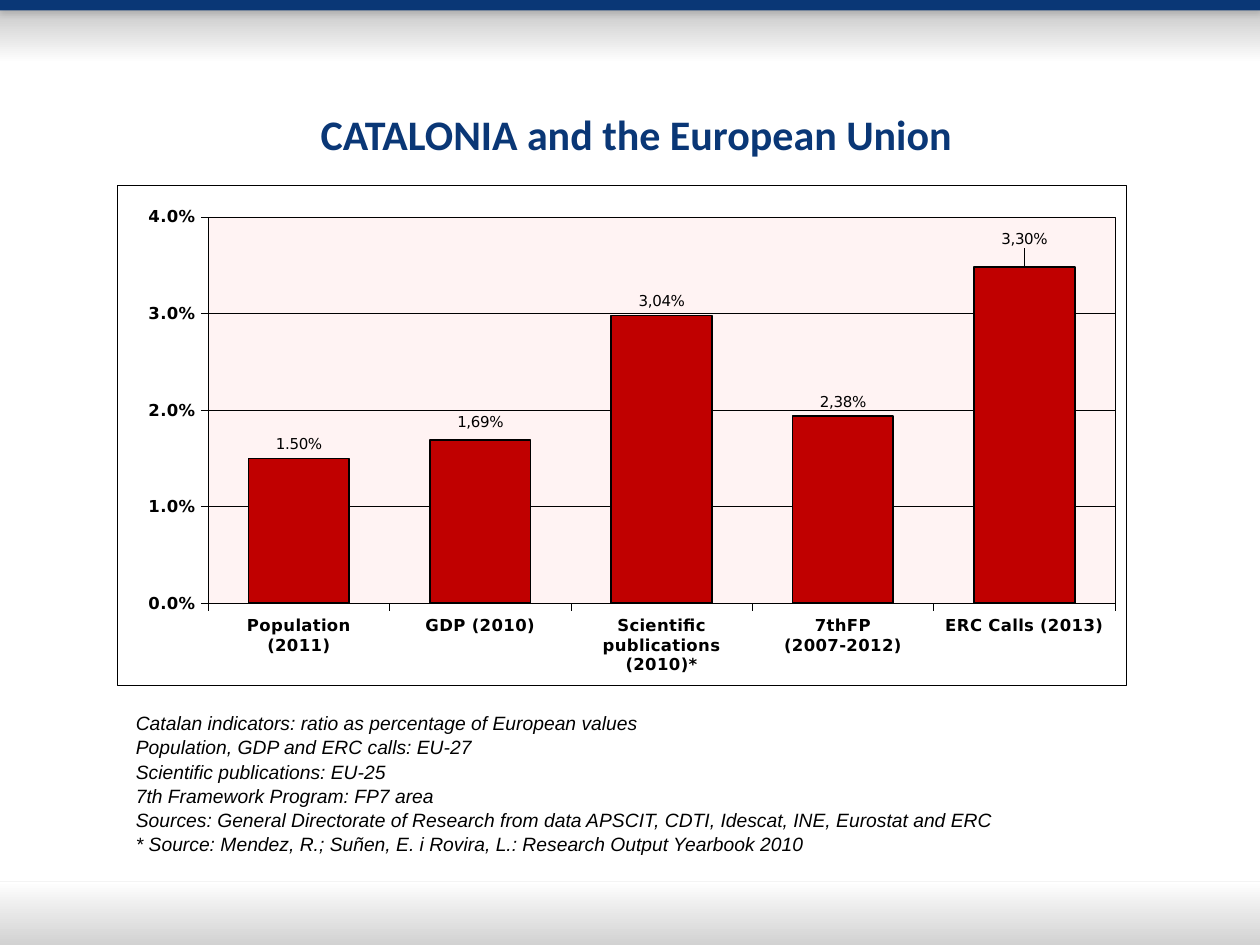
from pptx import Presentation, util as u
from pptx.chart import data as chart_data
from pptx.dml import color
from pptx.enum import chart as ch, shapes, text
from pptx.oxml import parse_xml
from pptx.oxml.ns import nsdecls, qn

TITLE = "CATALONIA and the European Union"
INDICATORS = [
    ("Population (2011)", 0.015, None, 0),
    ("GDP (2010)", 0.0169, "1,69%", -0.008),
    ("Scientific publications (2010)*", 0.0298, "3,04%", 0),
    ("7thFP\n(2007-2012)", 0.0194, "2,38%", 0),
    ("ERC Calls (2013)", 0.0348, "3,30%", -0.028),
]
NOTES = [
    "Catalan indicators: ratio as percentage of European values",
    "Population, GDP and ERC calls: EU-27",
    "Scientific publications: EU-25",
    "7th Framework Program: FP7 area",
    "Sources: General Directorate of Research from data APSCIT, CDTI, Idescat, INE, Eurostat and ERC",
    "* Source: Mendez, R.; Suñen, E. i Rovira, L.: Research Output Yearbook 2010",
]
THEME = {
    "navy": "0A3776", "grey": "BFBFBF", "white": "FFFFFF", "black": "000000",
    "bar": "C00000", "plot": "FFF3F3", "hairline": 0.25, "bar_line": 0.96,
    "title": dict(name="Calibri", size=u.Pt(24), bold=True),
    "notes": dict(name="Arial", size=u.Pt(11), italic=True),
    "axis": dict(name="DejaVu Sans", size=u.Pt(9.4), bold=True),
    "label": dict(name="DejaVu Sans", size=u.Pt(8.6), bold=False),
}
WIDTH, HEIGHT = u.Inches(10), u.Inches(7.5)
BAND = 1 / 15
PLOT_AREA = dict(x=0.09, y=0.063, w=0.899, h=0.774)


def rgb(name):
    return color.RGBColor.from_string(THEME[name])


def apply(target, **values):
    for name, value in values.items():
        setattr(target, name, value)


def style(font, kind, colour="black"):
    apply(font, **THEME[kind])
    font.color.rgb = rgb(colour)


def rule(line, width=THEME["hairline"]):
    line.color.rgb = rgb("black")
    line.width = u.Pt(width)


def box(left, top, width, height):
    return [round(left * WIDTH), round(top * HEIGHT),
            round(width * WIDTH), round(height * HEIGHT)]


def add_band(slide, top, height):
    band = slide.shapes.add_shape(shapes.MSO_SHAPE.RECTANGLE, *box(0, top, 1, height))
    band.shadow.inherit = False
    band.line.fill.background()
    slide.shapes.title.element.addprevious(band.element)
    return band


def add_gradient(slide, top, angle, alpha):
    band = add_band(slide, top, BAND)
    band.fill.gradient()
    band.fill.gradient_angle = angle
    for stop, name in zip(band.fill.gradient_stops, ("grey", "white")):
        stop.color.rgb = rgb(name)
    for colour in band.element.spPr.iter(qn("a:srgbClr")):
        colour.append(parse_xml(f'<a:alpha {nsdecls("a")} val="{alpha * 1000}"/>'))


def add_header(slide):
    header = add_band(slide, 0, 0.011)
    header.fill.solid()
    header.fill.fore_color.rgb = rgb("navy")
    header.element.spPr.find(qn("a:effectLst")).append(parse_xml(
        f'<a:outerShdw {nsdecls("a")} blurRad="{u.Pt(3.1)}" dist="{u.Pt(1.8)}" '
        'dir="5400000" rotWithShape="0"><a:srgbClr val="808080">'
        '<a:alpha val="35000"/></a:srgbClr></a:outerShdw>'))


def add_title(slide):
    title = slide.shapes.title
    apply(title, **dict(zip(("left", "top", "width", "height"),
                            box(0.067, 0.017, 0.858, 0.22))))
    frame = title.text_frame
    frame.text = TITLE
    apply(frame, vertical_anchor=text.MSO_ANCHOR.BOTTOM, word_wrap=True,
          auto_size=text.MSO_AUTO_SIZE.NONE,
          margin_bottom=u.Inches(0.52), margin_left=u.Inches(0.28))
    paragraph = frame.paragraphs[0]
    paragraph.alignment = text.PP_ALIGN.CENTER
    style(paragraph.runs[0].font, "title", "navy")


def manual_layout(**values):
    body = "".join(f'<c:{key} val="{value}"/>' for key, value in values.items())
    return parse_xml(f'<c:layout {nsdecls("c")}><c:manualLayout>{body}'
                     '</c:manualLayout></c:layout>')


def filled(name, outlined):
    width = u.Pt(THEME["hairline"])
    return parse_xml(
        f'<c:spPr {nsdecls("c", "a")}><a:solidFill><a:srgbClr val="{THEME[name]}"/>'
        f'</a:solidFill><a:ln w="{width}"><a:solidFill>'
        f'<a:srgbClr val="{THEME[outlined]}"/></a:solidFill></a:ln></c:spPr>')


def add_labels(series):
    labels = series.data_labels
    apply(labels, show_value=True, number_format="0.00%", number_format_is_linked=False,
          position=ch.XL_LABEL_POSITION.OUTSIDE_END)
    style(labels.font, "label")
    for index, (_, _, caption, shift) in enumerate(INDICATORS):
        if not caption:
            continue
        label = series.points[index].data_label
        label.text_frame.text = caption
        style(label.text_frame.paragraphs[0].runs[0].font, "label")
        label.position = ch.XL_LABEL_POSITION.OUTSIDE_END
        if shift:
            element = labels._element.findall(qn("c:dLbl"))[-1]
            element.insert(1, manual_layout(x=0, y=shift))


def add_chart(slide):
    source = chart_data.CategoryChartData(number_format="0.00%")
    source.categories = [row[0] for row in INDICATORS]
    source.add_series("Series 1", [row[1] for row in INDICATORS])
    chart = slide.shapes.add_chart(ch.XL_CHART_TYPE.COLUMN_CLUSTERED,
                                   *box(0.093, 0.196, 0.801, 0.529), source).chart
    apply(chart, has_legend=False, has_title=False)
    style(chart.font, "label")
    for axis in (chart.category_axis, chart.value_axis):
        axis.major_tick_mark = ch.XL_TICK_MARK.OUTSIDE
        style(axis.tick_labels.font, "axis")
        rule(axis.format.line)
    apply(chart.value_axis, minimum_scale=0, maximum_scale=0.04, major_unit=0.01,
          has_major_gridlines=True)
    rule(chart.value_axis.major_gridlines.format.line)
    apply(chart.value_axis.tick_labels, number_format="0.0%", number_format_is_linked=False)
    plot = chart.plots[0]
    apply(plot, gap_width=80, vary_by_categories=False)
    series = plot.series[0]
    series.format.fill.solid()
    series.format.fill.fore_color.rgb = rgb("bar")
    rule(series.format.line, THEME["bar_line"])
    add_labels(series)
    root = chart.element.find(qn("c:chart"))
    area = root.find(qn("c:plotArea"))
    for layout in area.findall(qn("c:layout")):
        area.remove(layout)
    area.insert(0, manual_layout(layoutTarget="inner", xMode="edge", yMode="edge", **PLOT_AREA))
    area.append(filled("plot", "black"))
    root.addnext(filled("white", "black"))


def add_notes(slide):
    frame = slide.shapes.add_textbox(*box(0.098, 0.745, 0.8, 0.223)).text_frame
    frame.word_wrap = True
    frame.text = "\n".join(NOTES)
    for paragraph in frame.paragraphs:
        paragraph.line_spacing = 1.05
        style(paragraph.runs[0].font, "notes")


def main():
    presentation = Presentation()
    apply(presentation, slide_width=WIDTH, slide_height=HEIGHT)
    slide = presentation.slides.add_slide(presentation.slide_layouts[5])
    add_gradient(slide, 1 - BAND, 90, 70)
    add_gradient(slide, 0, 270, 100)
    add_header(slide)
    add_title(slide)
    add_chart(slide)
    add_notes(slide)
    presentation.save("out.pptx")


if __name__ == "__main__":
    main()
